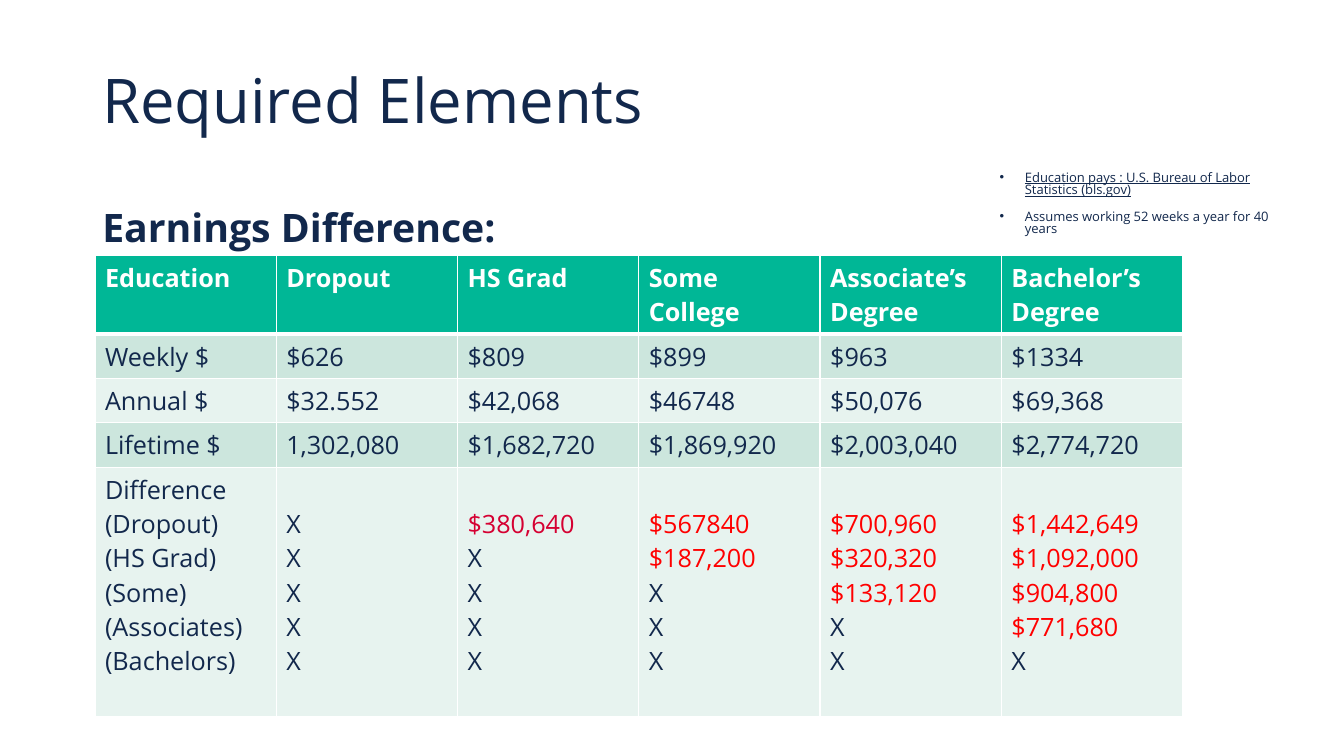
from lxml import etree
from pptx import Presentation
from pptx import util as u
from pptx.dml.color import RGBColor
from pptx.enum import text
from pptx.oxml import ns

NAVY, WHITE, GREEN, RED, CRIMSON = "12284C", "FFFFFF", "00B796", "FF0000", "D50032"
BANDS = ["CCE6DD", "E7F3EF"]


def color(value):
    return RGBColor.from_string(value)


def add_element(parent, tag, **attributes):
    return etree.SubElement(parent, ns.qn(tag), attributes)


class SlideBuilder:
    font_name = "Open Sans"

    def __init__(self, slide):
        self.slide = slide

    def style(self, font, size, fill=NAVY, bold=False, underline=False):
        font.name, font.size = self.font_name, u.Pt(size)
        font.bold, font.underline = bold, underline
        font.color.rgb = color(fill)

    def bullet(self, paragraph):
        properties = paragraph._p.get_or_add_pPr()
        properties.set("marL", str(u.Pt(18)))
        properties.set("indent", str(-u.Pt(18)))
        bullet_color = add_element(properties, "a:buClr")
        add_element(bullet_color, "a:srgbClr", val=NAVY)
        add_element(properties, "a:buFont", typeface="Arial")
        add_element(properties, "a:buChar", char="•")

    def text_box(self, bounds, lines, size, anchor, spacing=0.9, bold=False,
                 bullets=False, underlined=()):
        shape = self.slide.shapes.add_textbox(*map(u.Pt, bounds))
        frame = shape.text_frame
        frame.word_wrap, frame.vertical_anchor = True, anchor
        frame.text = "\n".join(lines)
        for index, paragraph in enumerate(frame.paragraphs):
            paragraph.line_spacing = spacing
            if index:
                paragraph.space_before = u.Pt(10)
            if bullets:
                self.bullet(paragraph)
            self.style(paragraph.font, size, bold=bold, underline=index in underlined)

    def borders(self, cell, top, bottom):
        properties = cell._tc.get_or_add_tcPr()
        for side, width in zip("LRTB", (1, 1, top, bottom)):
            line = add_element(properties, f"a:ln{side}", w=str(u.Pt(width)))
            add_element(add_element(line, "a:solidFill"), "a:srgbClr", val=WHITE)

    def table(self, bounds, rows, heights, inset_cells, text_color):
        shape = self.slide.shapes.add_table(len(rows), len(rows[0]), *map(u.Pt, bounds))
        table = shape.table
        for row, height in zip(table.rows, heights):
            row.height = u.Pt(height)
        for r, row in enumerate(rows):
            for c, content in enumerate(row):
                cell = table.cell(r, c)
                self.borders(cell, 3 if r == 1 else 1, 3 if r == 0 else 1)
                cell.fill.solid()
                cell.fill.fore_color.rgb = color(BANDS[(r - 1) % 2] if r else GREEN)
                if (r, c) in inset_cells:
                    cell.margin_top = u.Pt(28.1)
                cell.text = content
                for paragraph in cell.text_frame.paragraphs:
                    self.style(paragraph.font, 18, text_color(r, c, paragraph.text), r == 0)


def earnings_color(row, column, value):
    if row == 0:
        return WHITE
    if row == 4 and value.startswith("$"):
        return CRIMSON if column == 2 else RED
    return NAVY


def main():
    presentation = Presentation()
    presentation.slide_width, presentation.slide_height = u.Pt(960), u.Pt(540)
    slide = presentation.slides.add_slide(presentation.slide_layouts[6])
    builder = SlideBuilder(slide)

    # Headings
    builder.text_box((66, 28.75, 828, 90.7), ["Required Elements"], 44,
                     text.MSO_ANCHOR.MIDDLE)
    builder.text_box((66, 132.5, 564, 50.4), ["Earnings Difference:"], 28,
                     text.MSO_ANCHOR.BOTTOM, bold=True)

    # Source notes
    builder.text_box((707, 119.5, 229.7, 50.4),
                     ["Education pays : U.S. Bureau of Labor Statistics (bls.gov)",
                      "Assumes working 52 weeks a year for 40 years"],
                     9.3, text.MSO_ANCHOR.TOP, spacing=0.8, bullets=True, underlined=(0,))

    # Earnings table: each column lists its gains, then X for the remaining levels
    gains = [[], ["$380,640"], ["$567840", "$187,200"],
             ["$700,960", "$320,320", "$133,120"],
             ["$1,442,649", "$1,092,000", "$904,800", "$771,680"]]
    levels = ["Difference", "(Dropout)", "(HS Grad)", "(Some)", "(Associates)", "(Bachelors)"]
    rows = [
        ["Education", "Dropout", "HS Grad", "Some College", "Associate’s Degree",
         "Bachelor’s Degree"],
        ["Weekly $", "$626", "$809", "$899", "$963", "$1334"],
        ["Annual $", "$32.552", "$42,068", "$46748", "$50,076", "$69,368"],
        ["Lifetime $", "1,302,080", "$1,682,720", "$1,869,920", "$2,003,040", "$2,774,720"],
        ["\n".join(levels)] + ["\n".join(gain + ["X"] * (5 - len(gain))) for gain in gains],
    ]
    heights = [56, 31.7, 31.7, 31.7, 178.3]
    builder.table((67.8, 182.7, 777, sum(heights)), rows, heights,
                  {(4, column) for column in range(1, 6)}, earnings_color)

    presentation.save("out.pptx")


if __name__ == "__main__":
    main()
